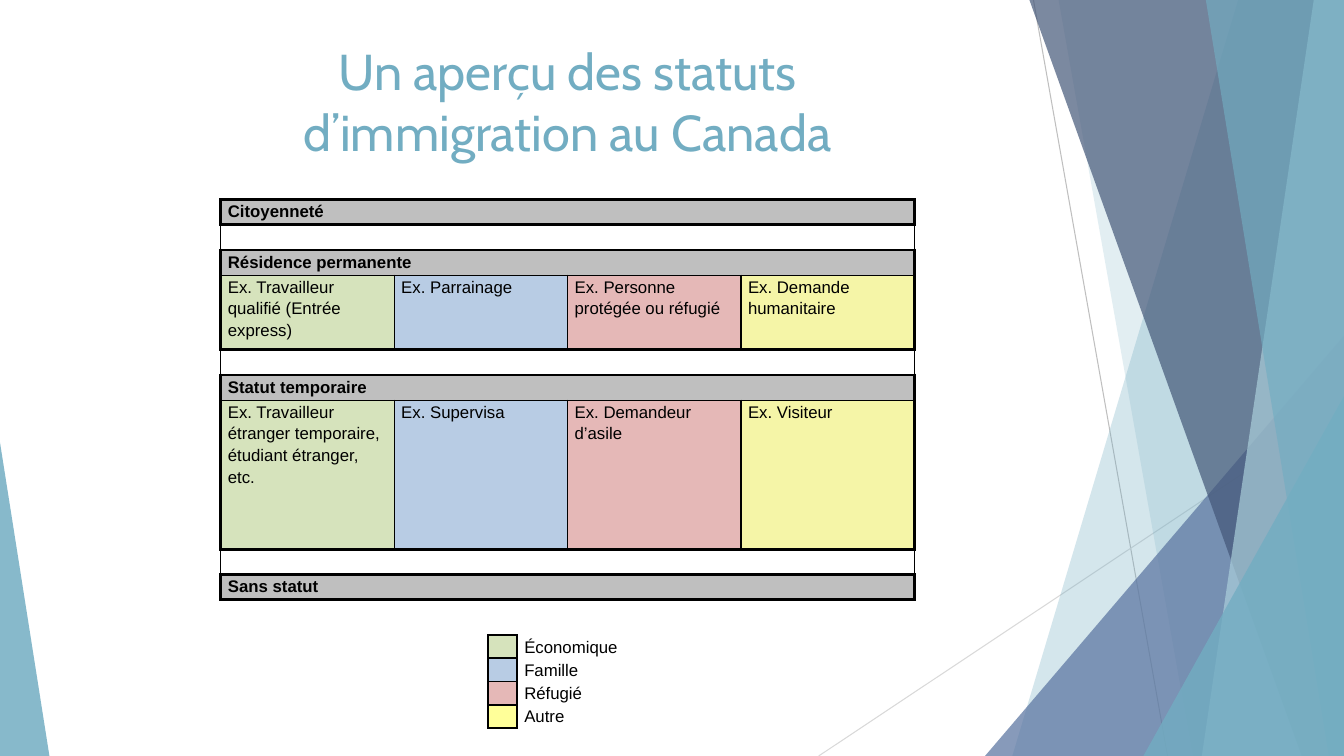
"""Build the slide on immigration statuses in Canada."""
from dataclasses import dataclass
from typing import Any, Optional, Union

from lxml.etree import SubElement
from pptx import Presentation
from pptx.dml.color import RGBColor
from pptx.enum.shapes import MSO_CONNECTOR, MSO_SHAPE
from pptx.enum.text import MSO_ANCHOR, PP_ALIGN
from pptx.oxml.ns import qn
from pptx.util import Inches, Pt


@dataclass(frozen=True)
class Theme:
    """Colours, fonts and sizes."""
    teal: str = "72ADC2"
    pale_teal: str = "AACEDA"
    blue: str = "5A74A0"
    navy: str = "445778"
    black: str = "000000"
    header: str = "BFBFBF"
    rule: str = "D9D9D9"
    economic: str = "D6E3BC"
    family: str = "B8CCE4"
    refugee: str = "E5B8B7"
    other: str = "F5F5A7"
    other_key: str = "FFFF99"
    title_font: str = "Cabin"
    body_font: str = "Arial"
    title_size: float = 36
    body_size: float = 12
    empty_size: float = 8
    thin: float = 1
    medium: float = 1.5
    thick: float = 2.25


@dataclass(frozen=True)
class Ray:
    """A thin background line."""
    x1: float
    y1: float
    x2: float
    y2: float
    color: str


@dataclass(frozen=True)
class Facet:
    """A band from a slanted edge to the right side of the slide."""
    top_x: float
    bottom_x: float
    color: str
    alpha: int


@dataclass(frozen=True)
class Corner:
    """A triangle standing on the bottom of the slide."""
    left: float
    top: float
    width: float
    apex: float
    color: str
    alpha: int


@dataclass(frozen=True)
class Band:
    """A table row: one merged text or one text per category."""
    height: float
    texts: tuple[str, ...] = ("",)
    bottom: float = 2.25


T = Theme()
WIDTH, HEIGHT = 13.33, 7.5
CATEGORIES = (T.economic, T.family, T.refugee, T.other)
LEGEND = {"Économique": T.economic, "Famille": T.family,
          "Réfugié": T.refugee, "Autre": T.other_key}
DECOR = (
    Ray(10.25, 0, 11.58, HEIGHT, T.header),
    Ray(WIDTH, 4.03, 8.12, HEIGHT, T.rule),
    Facet(12.28, 10.04, T.teal, 30),
    Facet(10.5, 11.83, T.teal, 20),
    Corner(9.77, 3.33, 3.56, 1, T.blue, 72),
    Facet(10.21, 12.91, T.navy, 70),
    Facet(13.03, 11.92, T.pale_teal, 70),
    Facet(11.96, 13.18, T.teal, 65),
    Corner(11.34, 3.93, 1.99, 1, T.teal, 80),
    Corner(0, 4.39, 0.49, 0, T.teal, 85),
)
GAP = Band(0.25)
BANDS = (
    Band(0.25, ("Citoyenneté",)),
    GAP,
    Band(0.25, ("Résidence permanente",), T.thin),
    Band(0.74, ("Ex. Travailleur qualifié (Entrée express)", "Ex. Parrainage",
                "Ex. Personne protégée ou réfugié", "Ex. Demande humanitaire")),
    GAP,
    Band(0.25, ("Statut temporaire",), T.thin),
    Band(1.48, ("Ex. Travailleur étranger temporaire, étudiant étranger, etc.",
                "Ex. Supervisa", "Ex. Demandeur d’asile", "Ex. Visiteur")),
    GAP,
    Band(0.25, ("Sans statut",)),
)


def assign(obj: Any, values: dict[str, Any]) -> None:
    """Set every attribute in values."""
    for name, value in values.items():
        setattr(obj, name, value)


def paint(fill: Any, color: str) -> None:
    """Fill with one colour."""
    fill.solid()
    fill.fore_color.rgb = RGBColor.from_string(color)


def draw_decor(s: Any, item: Union[Ray, Facet, Corner]) -> None:
    """Draw one background element."""
    if isinstance(item, Ray):
        ends = map(Inches, (item.x1, item.y1, item.x2, item.y2))
        sp = s.shapes.add_connector(MSO_CONNECTOR.STRAIGHT, *ends)
        paint(sp.line.fill, item.color)
        sp.line.width = Pt(0.75)
        SubElement(sp._element.spPr, qn("a:effectLst"))
        return
    if isinstance(item, Facet):
        edge = ((WIDTH, 0), (WIDTH, HEIGHT), (item.bottom_x, HEIGHT))
        fb = s.shapes.build_freeform(Inches(item.top_x), 0)
        fb.add_line_segments([(Inches(x), Inches(y)) for x, y in edge])
        sp = fb.convert_to_shape()
    else:
        box = (item.left, item.top, item.width, HEIGHT - item.top)
        sp = s.shapes.add_shape(MSO_SHAPE.ISOSCELES_TRIANGLE, *map(Inches, box))
        sp.adjustments[0] = item.apex
    sp.shadow.inherit = False
    sp.line.fill.background()
    paint(sp.fill, item.color)
    color = sp._element.spPr.find(f"{qn('a:solidFill')}/{qn('a:srgbClr')}")
    SubElement(color, qn("a:alpha"), val=str(item.alpha * 1000))


def style_cell(cell: Any, text: str, color: Optional[str],
               borders: tuple[float, float, float, float], bold: bool = False) -> None:
    """Set text, fill and left, right, top, bottom borders of a cell."""
    assign(cell, {"margin_left": Inches(0.07), "margin_right": Inches(0.07),
                  "margin_top": 0, "margin_bottom": 0})
    tcPr = cell._tc.get_or_add_tcPr()
    for side, width in zip("LRTB", borders):
        ln = SubElement(tcPr, qn(f"a:ln{side}"), w=str(Pt(width)))
        if width:
            fill = SubElement(ln, qn("a:solidFill"))
            SubElement(fill, qn("a:srgbClr"), val=T.black)
        else:
            SubElement(ln, qn("a:noFill"))
    if color:
        paint(cell.fill, color)
    else:
        cell.fill.background()
    p = cell.text_frame.paragraphs[0]
    if not text:
        p._p.get_or_add_endParaRPr().set("sz", str(T.empty_size * 100))
        return
    p.line_spacing = 1.15
    r = p.add_run()
    r.text = text
    assign(r.font, {"name": T.body_font, "size": Pt(T.body_size), "bold": bold})
    r.font.color.rgb = RGBColor.from_string(T.black)


def add_grid(s: Any, left: float, top: float, cols: list[float], rows: list[float]) -> Any:
    """Add a plain table with the given column widths and row heights."""
    box = map(Inches, (left, top, sum(cols), sum(rows)))
    tbl = s.shapes.add_table(len(rows), len(cols), *box).table
    assign(tbl, {"first_row": False, "horz_banding": False})
    for col, width in zip(tbl.columns, cols):
        col.width = Inches(width)
    for row, height in zip(tbl.rows, rows):
        row.height = Inches(height)
    return tbl


def draw_statuses(s: Any) -> None:
    """Draw the table of statuses."""
    last = len(CATEGORIES) - 1
    tbl = add_grid(s, 2.19, 1.98, [1.72] * len(CATEGORIES), [b.height for b in BANDS])
    for i, band in enumerate(BANDS):
        split = len(band.texts) > 1
        top = T.thin if split else T.thick
        if not split:
            tbl.cell(i, 0).merge(tbl.cell(i, last))
        for j, category in enumerate(CATEGORIES):
            text = band.texts[j] if j < len(band.texts) else ""
            color = category if split else T.header if band.texts[0] else None
            edge = T.thick if color else T.thin
            borders = (edge if j == 0 else T.thin, edge if j == last or not split else T.thin,
                       top, band.bottom)
            style_cell(tbl.cell(i, j), text, color, borders, not split)


def draw_legend(s: Any) -> None:
    """Draw the colour key."""
    tbl = add_grid(s, 4.84, 6.3, [0.29, 1.08], [0.21] * len(LEGEND))
    for i, (label, color) in enumerate(LEGEND.items()):
        style_cell(tbl.cell(i, 0), "", color, (T.medium,) * 4)
        style_cell(tbl.cell(i, 1), label, None, (T.medium, 0, 0, 0))


def draw_title(s: Any) -> None:
    """Draw the title."""
    tf = s.shapes.add_textbox(*map(Inches, (0.93, 0.28, 9.4, 1.44))).text_frame
    assign(tf, {"word_wrap": True, "vertical_anchor": MSO_ANCHOR.MIDDLE,
                "text": "Un aperçu des statuts\vd’immigration au Canada"})
    p = tf.paragraphs[0]
    p.alignment = PP_ALIGN.CENTER
    for r in p.runs:
        assign(r.font, {"name": T.title_font, "size": Pt(T.title_size)})
        r.font.color.rgb = RGBColor.from_string(T.teal)


def main() -> None:
    """Build and save the slide."""
    prs = Presentation()
    assign(prs, {"slide_width": Inches(WIDTH), "slide_height": Inches(HEIGHT)})
    s = prs.slides.add_slide(prs.slide_layouts[6])
    for item in DECOR:
        draw_decor(s, item)
    draw_title(s)
    draw_statuses(s)
    draw_legend(s)
    prs.save("out.pptx")


if __name__ == "__main__":
    main()
